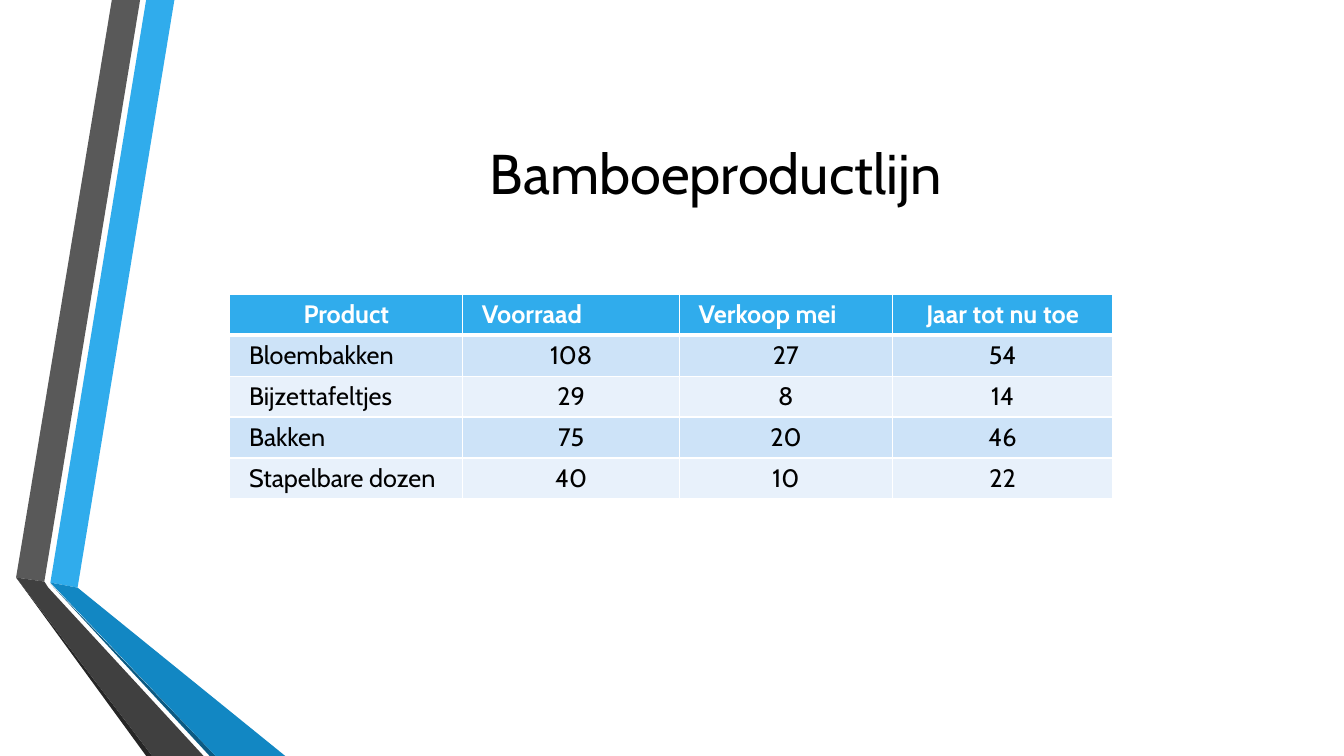
"""Build the bamboo product line slide with its folded ribbons and sales table."""
from lxml import etree
from pptx import Presentation
from pptx.dml.color import RGBColor
from pptx.enum.text import MSO_ANCHOR, PP_ALIGN
from pptx.oxml.ns import qn
from pptx.util import Inches, Pt

LEFT, CENTER = PP_ALIGN.LEFT, PP_ALIGN.CENTER
MIDDLE = MSO_ANCHOR.MIDDLE
FONT = "Cabin"
BLACK = RGBColor(0x00, 0x00, 0x00)
WHITE = RGBColor(0xFF, 0xFF, 0xFF)
BLUE = RGBColor(0x30, 0xAC, 0xEC)
MID_BLUE = RGBColor(0x12, 0x87, 0xC3)
DARK_BLUE = RGBColor(0x0C, 0x5A, 0x82)
GRAY = RGBColor(0x59, 0x59, 0x59)
DARK_GRAY = RGBColor(0x40, 0x40, 0x40)
CHARCOAL = RGBColor(0x26, 0x26, 0x26)
BANDS = (RGBColor(0xCD, 0xE3, 0xF8), RGBColor(0xE8, 0xF1, 0xFB))

TITLE = "Bamboeproductlijn"
HEADERS = ("Product", "Voorraad", "Verkoop mei", "Jaar tot nu toe")
HEADER_ALIGNS = (CENTER, LEFT, LEFT, CENTER)
BODY_ALIGNS = (LEFT, CENTER, CENTER, CENTER)
PRODUCTS = [
    ("Bloembakken", 108, 27, 54),
    ("Bijzettafeltjes", 29, 8, 14),
    ("Bakken", 75, 20, 46),
    ("Stapelbare dozen", 40, 10, 22),
]
COLUMN_WIDTHS = (2.31, 2.15, 2.11, 2.19)
ROW_HEIGHT = 0.406
RIBBONS = [
    (BLUE, [(0.5, 5.78), (0.77, 5.83), (1.73, 0), (1.45, 0)]),
    (GRAY, [(1.39, 0), (1.11, 0), (0.16, 5.73), (0.44, 5.77)]),
    (CHARCOAL, [(0.16, 5.73), (1.45, 7.5), (1.51, 7.5)]),
    (DARK_BLUE, [(0.5, 5.79), (2.08, 7.5), (2.14, 7.5)]),
    (MID_BLUE, [(0.5, 5.78), (2.14, 7.5), (2.83, 7.5), (0.77, 5.83)]),
    (DARK_GRAY, [(2.02, 7.5), (0.48, 5.83), (0.44, 5.77), (0.16, 5.73), (1.51, 7.5)]),
]


def add_ribbon(page, color, corners):
    points = [(Inches(x), Inches(y)) for x, y in corners]
    builder = page.shapes.build_freeform(*points[0])
    builder.add_line_segments(points[1:], close=True)
    ribbon = builder.convert_to_shape()
    ribbon.shadow.inherit = False
    ribbon.fill.solid()
    ribbon.fill.fore_color.rgb = color
    ribbon.line.fill.background()


def write(frame, text, size, color, align, bold=False):
    frame.text = text
    para = frame.paragraphs[0]
    para.alignment = align
    font = para.runs[0].font
    font.name, font.size, font.bold = FONT, Pt(size), bold
    font.color.rgb = color


def set_borders(cell, top, bottom):
    properties = cell._tc.get_or_add_tcPr()
    for index, (side, width) in enumerate((("L", 1), ("R", 1), ("T", top), ("B", bottom))):
        line = etree.Element(qn(f"a:ln{side}"), w=str(Pt(width)))
        fill = etree.SubElement(line, qn("a:solidFill"))
        etree.SubElement(fill, qn("a:srgbClr"), val=str(WHITE))
        properties.insert(index, line)


def add_product_table(page):
    rows = [HEADERS, *PRODUCTS]
    table = page.shapes.add_table(
        len(rows), len(HEADERS), Inches(2.28), Inches(2.92),
        Inches(sum(COLUMN_WIDTHS)), Inches(ROW_HEIGHT * len(rows)),
    ).table
    for column, width in zip(table.columns, COLUMN_WIDTHS):
        column.width = Inches(width)
    for row_index, values in enumerate(rows):
        header = row_index == 0
        fill = BLUE if header else BANDS[(row_index - 1) % 2]
        aligns = HEADER_ALIGNS if header else BODY_ALIGNS
        for column_index, value in enumerate(values):
            cell = table.cell(row_index, column_index)
            cell.margin_left = cell.margin_right = Inches(0.19)
            cell.margin_top = cell.margin_bottom = Inches(0.05)
            cell.vertical_anchor = MIDDLE
            cell.fill.solid()
            cell.fill.fore_color.rgb = fill
            write(cell.text_frame, str(value), 18, WHITE if header else BLACK,
                  aligns[column_index], header)
            set_borders(cell, 3 if row_index == 1 else 1, 3 if header else 1)


def main():
    deck = Presentation()
    deck.slide_width, deck.slide_height = Inches(13.33), Inches(7.5)
    page = deck.slides.add_slide(deck.slide_layouts[6])
    for color, corners in RIBBONS:
        add_ribbon(page, color, corners)
    title = page.shapes.add_textbox(Inches(1.62), Inches(0.75), Inches(10.96), Inches(1.92))
    title.text_frame.word_wrap = True
    title.text_frame.vertical_anchor = MIDDLE
    write(title.text_frame, TITLE, 40, BLACK, CENTER)
    add_product_table(page)
    deck.save("out.pptx")


if __name__ == "__main__":
    main()
